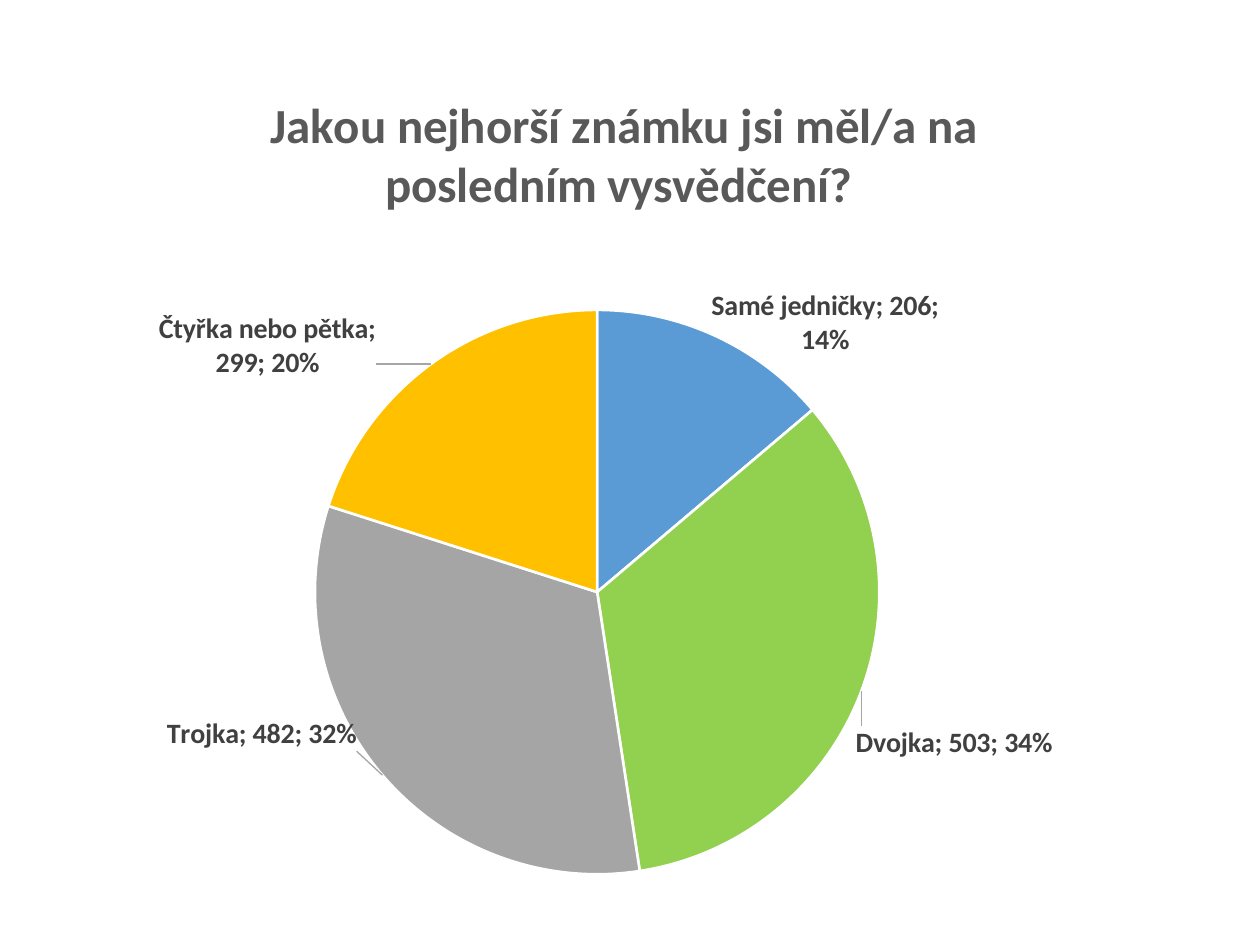
from pptx import Presentation
from pptx import util as u
from pptx.chart.data import CategoryChartData
from pptx.dml.color import RGBColor
from pptx.enum import chart as ch
from pptx.oxml import parse_xml
from pptx.oxml.ns import nsdecls, qn

QUESTION = " Jakou nejhorší známku jsi měl/a na posledním vysvědčení?"
FONT = "Calibri"
COLORS = {
    "title": "595959", "label": "404040", "leader": "A6A6A6", "edge": "FFFFFF",
    "blue": "5B9BD5", "green": "92D050", "grey": "A5A5A5", "yellow": "FFC000",
}
GRADES = [
    ("Samé jedničky", 206, "blue", (-0.06, 0.22), (1.5, 0.62)),
    ("Dvojka", 503, "green", (-0.1, 0.26), None),
    ("Trojka", 482, "grey", (-0.16, -0.5), None),
    ("Čtyřka nebo pětka", 299, "yellow", (-0.4, 0.18), None),
]
CHART_BOX = (0.31, 0.47, 9.11, 6.62)
PIE_CENTER, PIE_RADIUS = (4.74, 4.7), 2.24
TITLE_AT = (1.68, 0.19)
C15 = "http://schemas.microsoft.com/office/drawing/2012/chart"
LABEL_EXT = "{CE6537A1-D6FC-4f65-9D91-7224C49458BB}"


def rgb(name):
    return RGBColor.from_string(COLORS[name])


def manual_xml(at=None, size=None, edge=True, inner=False):
    parts = ['<c:layoutTarget val="inner"/>'] if inner else []
    if at and edge:
        parts.append('<c:xMode val="edge"/><c:yMode val="edge"/>')
    for tags, lengths in (("xy", at), ("wh", size)):
        for tag, length, whole in zip(tags, lengths or (), CHART_BOX[2:]):
            parts.append(f'<c:{tag} val="{length / whole:.4f}"/>')
    return f'<c:manualLayout>{"".join(parts)}</c:manualLayout>'


def set_layout(parent, manual, index):
    for old in parent.findall(qn("c:layout")):
        parent.remove(old)
    parent.insert(index, parse_xml(f'<c:layout {nsdecls("c")}>{manual}</c:layout>'))


def label_size_xml(size):
    if not size:
        return ""
    return (
        f'<c:extLst><c:ext uri="{LABEL_EXT}" xmlns:c15="{C15}">'
        f'<c15:layout>{manual_xml(size=size)}</c15:layout></c:ext></c:extLst>'
    )


def labels_xml():
    style = (
        '<c:spPr><a:noFill/><a:ln><a:noFill/></a:ln></c:spPr>'
        '<c:txPr><a:bodyPr/><a:lstStyle/><a:p><a:pPr><a:defRPr sz="1600" b="1">'
        f'<a:solidFill><a:srgbClr val="{COLORS["label"]}"/></a:solidFill>'
        f'<a:latin typeface="{FONT}"/></a:defRPr></a:pPr><a:endParaRPr lang="cs-CZ"/></a:p></c:txPr>'
        '<c:dLblPos val="outEnd"/><c:showLegendKey val="0"/><c:showVal val="1"/>'
        '<c:showCatName val="1"/><c:showSerName val="0"/><c:showPercent val="1"/>'
        '<c:showBubbleSize val="0"/><c:separator>; </c:separator>'
    )
    moved = "".join(
        f'<c:dLbl><c:idx val="{i}"/><c:layout>{manual_xml(shift, edge=False)}</c:layout>'
        f'{style}{label_size_xml(size)}</c:dLbl>'
        for i, (_, _, _, shift, size) in enumerate(GRADES)
    )
    leader = (
        '<c:showLeaderLines val="1"/><c:leaderLines><c:spPr><a:ln w="9525"><a:solidFill>'
        f'<a:srgbClr val="{COLORS["leader"]}"/></a:solidFill></a:ln></c:spPr></c:leaderLines>'
    )
    return f'<c:dLbls {nsdecls("c", "a")}>{moved}{style}{leader}</c:dLbls>'


prs = Presentation()
prs.slide_width, prs.slide_height = u.Inches(10), u.Inches(7.5)
slide = prs.slides.add_slide(prs.slide_layouts[6])

answers = CategoryChartData()
answers.categories = [grade for grade, *_ in GRADES]
answers.add_series("Series 1", [count for _, count, *_ in GRADES])
chart = slide.shapes.add_chart(
    ch.XL_CHART_TYPE.PIE, *map(u.Inches, CHART_BOX), answers
).chart
chart.has_legend = False
chart.font.name, chart.font.size = FONT, u.Pt(10)

chart.has_title = True
heading = chart.chart_title.text_frame.paragraphs[0].add_run()
heading.text = QUESTION
heading.font.name, heading.font.size, heading.font.bold = FONT, u.Pt(28), True
heading.font.color.rgb = rgb("title")
set_layout(chart.chart_title._element, manual_xml(TITLE_AT), 1)

pie_at = [c - PIE_RADIUS - start for c, start in zip(PIE_CENTER, CHART_BOX)]
pie_size = (2 * PIE_RADIUS, 2 * PIE_RADIUS)
plot_area = chart._chartSpace.find(".//" + qn("c:plotArea"))
set_layout(plot_area, manual_xml(pie_at, pie_size, inner=True), 0)

plot = chart.plots[0]
plot.vary_by_categories = True
counts = plot.series[0]
for i, (_, _, color, *_) in enumerate(GRADES):
    piece = counts.points[i].format
    piece.fill.solid()
    piece.fill.fore_color.rgb = rgb(color)
    piece.line.color.rgb = rgb("edge")
    piece.line.width = u.Pt(1.5)
counts._element.find(qn("c:cat")).addprevious(parse_xml(labels_xml()))

prs.save("out.pptx")
